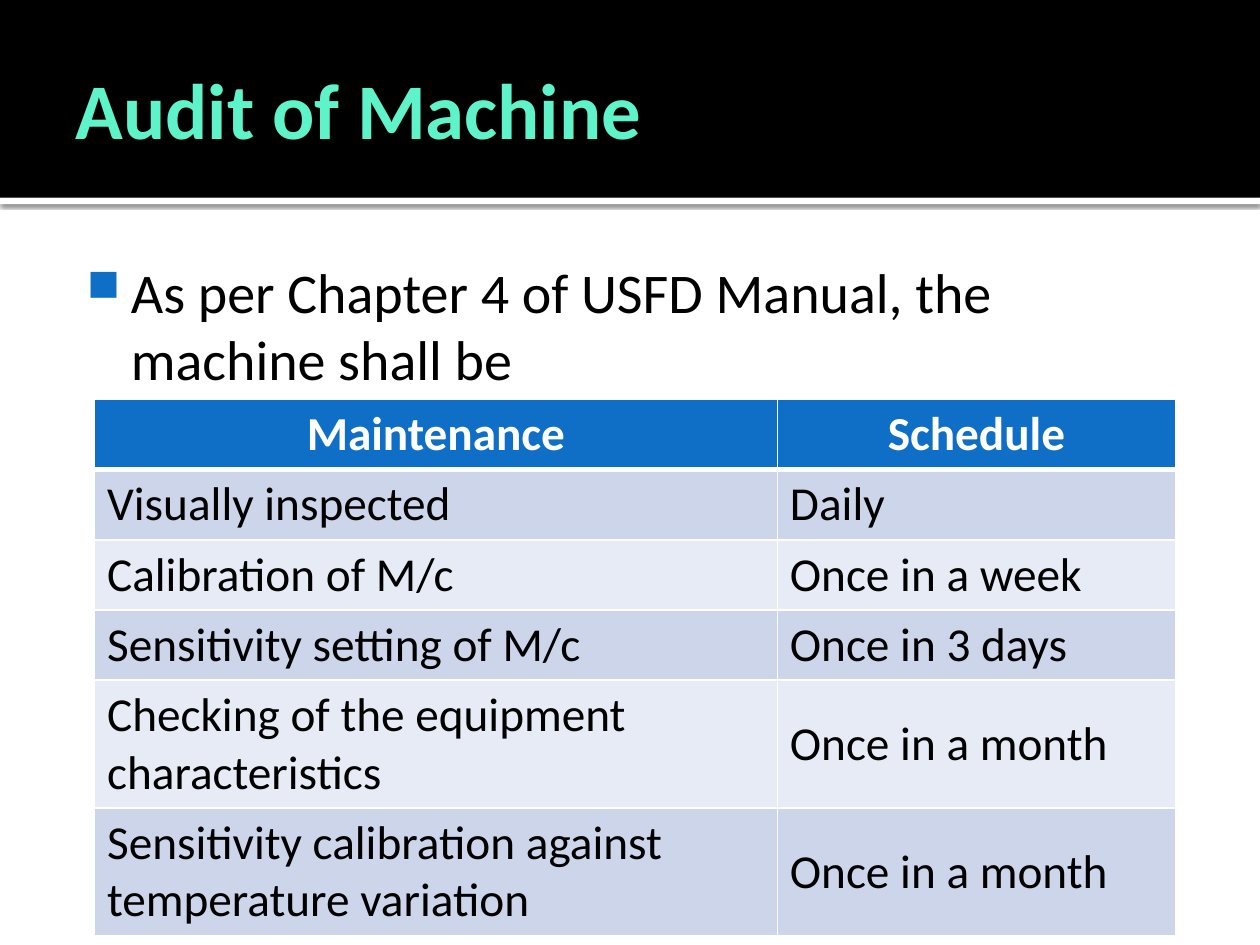
from lxml import etree
from pptx import Presentation
from pptx import util as u
from pptx.dml import color
from pptx.enum import shapes, text
from pptx.oxml import ns, parse_xml

ROWS = [
    ("Maintenance", "Schedule"),
    ("Visually inspected", "Daily"),
    ("Calibration of M/c", "Once in a week"),
    ("Sensitivity setting of M/c", "Once in 3 days"),
    ("Checking of the equipment characteristics", "Once in a month"),
    ("Sensitivity calibration against temperature variation", "Once in a month"),
]
COL_WIDTHS = [5.42, 3.16]
ROW_HEIGHTS = [0.5] * 4 + [0.87] * 2


def rgb(value):
    return color.RGBColor.from_string(value)


def inches(values):
    return [u.Inches(v) for v in values]


def xml(markup):
    return parse_xml(markup.replace(">", f" {ns.nsdecls('a')}>", 1))


def write(tf, content, size, fill="000000", bold=False, font="Calibri", align=text.PP_ALIGN.LEFT):
    p = tf.paragraphs[0]
    p.alignment = align
    r = p.add_run()
    r.text = content
    r.font.name = font
    r.font.size = u.Pt(size)
    r.font.bold = bold
    r.font.color.rgb = rgb(fill)
    return p


def set_frame(tf, margins, anchor):
    tf.word_wrap = True
    tf.auto_size = text.MSO_AUTO_SIZE.NONE
    tf.vertical_anchor = anchor
    tf.margin_left, tf.margin_top, tf.margin_right, tf.margin_bottom = inches(margins)


class SlideBuilder:
    accent = "0F6FC6"
    white = "FFFFFF"
    bands = ("E7EBF5", "CCD5EA")

    def __init__(self, prs):
        self.s = prs.slides.add_slide(prs.slide_layouts[5])
        self.s.background.fill.solid()
        self.s.background.fill.fore_color.rgb = rgb(self.white)

    def band(self, box, fill, shadow=False):
        sp = self.s.shapes.add_shape(shapes.MSO_SHAPE.RECTANGLE, *inches(box))
        sp.shadow.inherit = False
        sp.fill.solid()
        sp.fill.fore_color.rgb = rgb(fill)
        sp.line.fill.background()
        if shadow:
            effects = sp.element.spPr.find(ns.qn("a:effectLst"))
            effects.append(xml(
                f'<a:outerShdw blurRad="{u.Pt(2.5)}" dist="{u.Pt(0.8)}" dir="5400000" rotWithShape="0">'
                '<a:srgbClr val="000000"><a:alpha val="60000"/></a:srgbClr></a:outerShdw>'))

    def title(self, content, box):
        sp = self.s.shapes.title
        sp.left, sp.top, sp.width, sp.height = inches(box)
        set_frame(sp.text_frame, (0.1, 0.05, 0.05, 0.05), text.MSO_ANCHOR.MIDDLE)
        write(sp.text_frame, content, 45, "5FF3CA", bold=True)
        sp.element.getparent().append(sp.element)

    def bullet(self, content, box):
        tf = self.s.shapes.add_textbox(*inches(box)).text_frame
        set_frame(tf, (0.06, 0.1, 0.1, 0.05), text.MSO_ANCHOR.TOP)
        p = write(tf, content, 32)
        pPr = p._p.get_or_add_pPr()
        pPr.set("marL", str(u.Inches(0.48)))
        pPr.set("indent", str(u.Inches(-0.35)))
        for markup in (
            f'<a:buClr><a:srgbClr val="{self.accent}"/></a:buClr>',
            '<a:buSzPct val="80000"></a:buSzPct>',
            '<a:buChar char="■"></a:buChar>',
        ):
            pPr.append(xml(markup))

    def borders(self, cell, bottom):
        tcPr = cell._tc.get_or_add_tcPr()
        for i, (side, width) in enumerate(zip("LRTB", (1, 1, 1, bottom))):
            ln = etree.Element(ns.qn(f"a:ln{side}"), w=str(u.Pt(width)))
            ln.append(xml(f'<a:solidFill><a:srgbClr val="{self.white}"/></a:solidFill>'))
            tcPr.insert(i, ln)

    def table(self, rows, left, top, widths, heights):
        box = inches((left, top, sum(widths), sum(heights)))
        table = self.s.shapes.add_table(len(rows), len(widths), *box).table
        for column, width in zip(table.columns, widths):
            column.width = u.Inches(width)
        for i, (row, height) in enumerate(zip(rows, heights)):
            table.rows[i].height = u.Inches(height)
            header = i == 0
            for j, content in enumerate(row):
                cell = table.cell(i, j)
                cell.vertical_anchor = text.MSO_ANCHOR.MIDDLE
                cell.fill.solid()
                cell.fill.fore_color.rgb = rgb(self.accent if header else self.bands[i % 2])
                self.borders(cell, 3 if header else 1)
                write(cell.text_frame, content, 27, self.white if header else "000000", bold=header,
                      align=text.PP_ALIGN.CENTER if header else text.PP_ALIGN.LEFT)


def main():
    prs = Presentation()
    prs.slide_width, prs.slide_height = inches((10, 7.5))
    slide = SlideBuilder(prs)
    slide.band((0, 1.57, 10, 0.05), "FFFFFF", shadow=True)
    slide.band((0, 0, 10, 1.57), "000000")
    slide.title("Audit of Machine", (0.5, 0.17, 9, 1.37))
    slide.bullet("As per Chapter 4 of USFD Manual, the machine shall be", (0.5, 1.94, 9, 5.06))
    slide.table(ROWS, 0.75, 3.17, COL_WIDTHS, ROW_HEIGHTS)
    prs.save("out.pptx")


if __name__ == "__main__":
    main()
